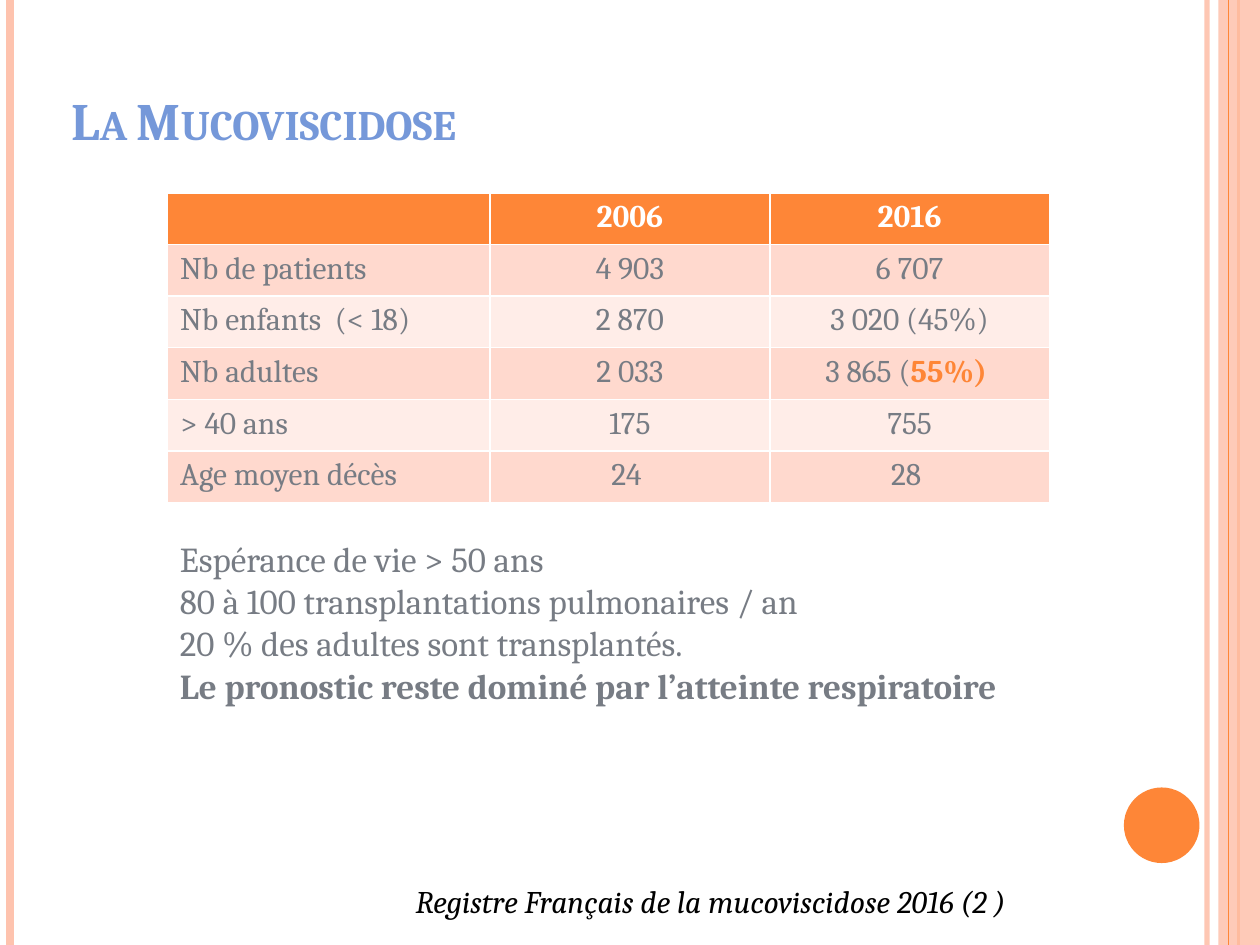
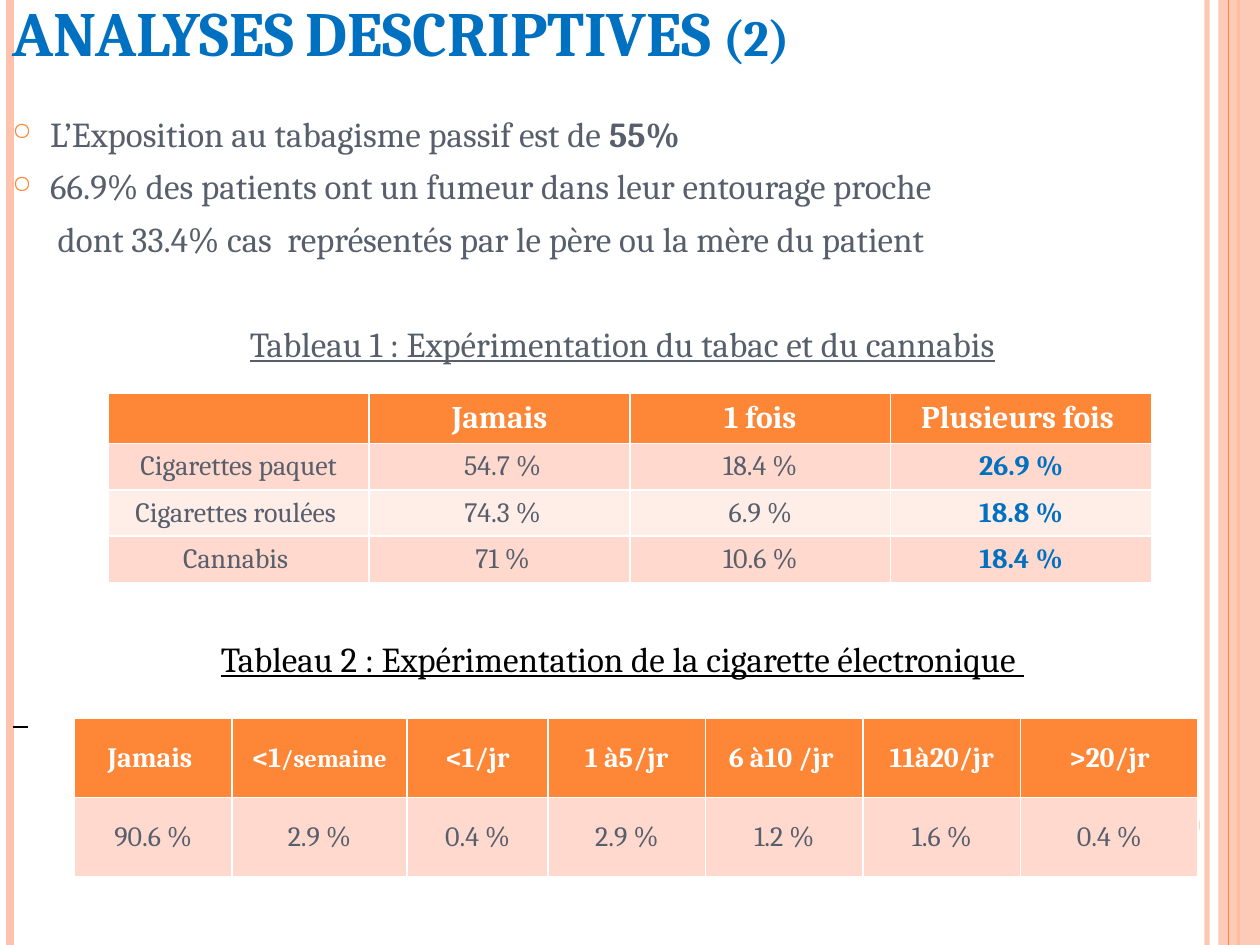
"""Builds two slides on cystic fibrosis figures and smoking habits."""
from lxml.etree import SubElement
from pptx import Presentation
from pptx.dml.color import RGBColor
from pptx.enum.shapes import MSO_CONNECTOR, MSO_SHAPE
from pptx.enum.text import MSO_ANCHOR, PP_ALIGN
from pptx.oxml.ns import qn
from pptx.util import Inches, Pt

FACE = "Cambria"
PEACH, ORANGE, WHITE, BLACK = "FEC3AE", "FE8637", "FFFFFF", "000000"
GREY, SLATE, SKY, BLUE = "777C84", "575F6D", "7598D9", "0070C0"
BANDS = ("FFD9CE", "FFEDE8")
WIDE, HIGH = 10, 7.5

RULES = [(9.58, PEACH, 3, 93), (0.08, PEACH, 4.5, 100), (9.83, ORANGE, 1.5, 100)]
EDGE = (9.75, ORANGE, 0.75, 100)

CARE = [
    ["", "2006", "2016"],
    ["Nb de patients", "4 903", "6 707"],
    ["Nb enfants  (< 18)", "2 870", "3 020 (45%)"],
    ["Nb adultes", "2 033", [("3 865 (", {}), ("55%) ", {"hue": ORANGE, "bold": True})]],
    ["> 40 ans", "175", "755"],
    ["Age moyen décès", "24 ", "28 "],
]
FACTS = [
    "Espérance de vie > 50 ans",
    "80 à 100 transplantations pulmonaires / an",
    "20 % des adultes sont transplantés.",
    [("Le pronostic reste dominé par l’atteinte respiratoire", {"bold": True})],
]
SOURCE = "Registre Français de la mucoviscidose 2016 (2 )"

POINTS = [
    [("L’Exposition au tabagisme passif est de ", {}), ("55%", {"bold": True})],
    "66.9% des patients ont un fumeur dans leur entourage proche",
]
DETAIL = "dont 33.4% cas  représentés par le père ou la mère du patient"
HEADS = [
    ("Tableau 1 : Expérimentation du tabac et du cannabis", 4, SLATE),
    ("Tableau 2 : Expérimentation de la cigarette électronique ", 10, BLACK),
]
SMOKE = [
    ["", "Jamais", "1 fois", "Plusieurs fois "],
    ["Cigarettes paquet", " 54.7 %", "18.4 %", "26.9 %"],
    ["Cigarettes roulées ", " 74.3 %", "6.9 %", "18.8 %"],
    ["Cannabis ", " 71 %", "10.6 %", "18.4 %"],
]
VAPE = [
    ["Jamais ", [("<1", {}), ("/semaine", {"size": 14})], "<1/jr", "1 à5/jr",
     "6 à10 /jr ", "11à20/jr", ">20/jr"],
    ["90.6 %", "2.9 %", "0.4 %", "2.9 %", "1.2 %", "1.6 %", "0.4 %"],
]


def tint(code):
    """Turn a hex string into a colour."""
    return RGBColor.from_string(code)


def style(font, size=None, hue=None, bold=None, italic=None, under=None):
    """Set the given traits on a font."""
    font.name = FACE
    if size:
        font.size = Pt(size)
    if hue:
        font.color.rgb = tint(hue)
    for key, value in (("bold", bold), ("italic", italic), ("underline", under)):
        if value is not None:
            setattr(font, key, value)


def write(para, text, align=PP_ALIGN.LEFT, **look):
    """Fill a paragraph with a string or a list of styled runs."""
    para.alignment = align
    style(para.font, **look)
    for part, extra in [(text, {})] if isinstance(text, str) else text:
        if part:
            run = para.add_run()
            run.text = part
            if extra:
                style(run.font, **extra)


def frame(slide, x, y, w, h, anchor=MSO_ANCHOR.TOP):
    """Add an empty wrapping text box and return its frame."""
    box = slide.shapes.add_textbox(Inches(x), Inches(y), Inches(w), Inches(h))
    area = box.text_frame
    area.word_wrap = True
    area.vertical_anchor = anchor
    return area


def fade(shape, alpha):
    """Make every colour of a shape partly transparent."""
    if alpha < 100:
        for node in list(shape._element.spPr.iter(qn("a:srgbClr"))):
            SubElement(node, qn("a:alpha")).set("val", str(alpha * 1000))


def rule(slide, ends, hue, width, alpha=100):
    """Draw a straight line between two points."""
    line = slide.shapes.add_connector(MSO_CONNECTOR.STRAIGHT, *map(Inches, ends))
    line.line.color.rgb = tint(hue)
    line.line.width = Pt(width)
    fade(line, alpha)
    SubElement(line._element.spPr, qn("a:effectLst"))


def solid(slide, kind, spot, hue, alpha=100):
    """Draw a filled shape without outline."""
    shape = slide.shapes.add_shape(kind, *map(Inches, spot))
    shape.shadow.inherit = False
    shape.fill.solid()
    shape.fill.fore_color.rgb = tint(hue)
    shape.line.fill.background()
    fade(shape, alpha)


def start(deck, title, spot, size, hue):
    """Add a slide with the shared bands, disc and title."""
    slide = deck.slides.add_slide(deck.slide_layouts[6])
    for x, *look in RULES:
        rule(slide, (x, 0, x, HIGH), *look)
    solid(slide, MSO_SHAPE.RECTANGLE, (9.67, 0, 0.33, HIGH), PEACH, 87)
    x, *look = EDGE
    rule(slide, (x, 0, x, HIGH), *look)
    solid(slide, MSO_SHAPE.OVAL, (8.92, 6.25, 0.6, 0.6), ORANGE)
    para = frame(slide, *spot, MSO_ANCHOR.BOTTOM).paragraphs[0]
    write(para, title, size=size, hue=hue, bold=True)
    para.runs[0]._r.get_or_add_rPr().set("cap", "small")
    return slide


def grid(slide, x, y, cols, tall, rows, sizes, hue, anchor, left=False, strong=None):
    """Add a banded table; tall and sizes give header and body values."""
    heights = [tall[0]] + [tall[1]] * (len(rows) - 1)
    table = slide.shapes.add_table(
        len(rows), len(cols), Inches(x), Inches(y),
        Inches(sum(cols)), Inches(sum(heights))).table
    for col, width in zip(table.columns, cols):
        col.width = Inches(width)
    for r, row in enumerate(rows):
        table.rows[r].height = Inches(heights[r])
        for c, text in enumerate(row):
            cell = table.cell(r, c)
            cell.vertical_anchor = anchor
            cell.fill.solid()
            cell.fill.fore_color.rgb = tint(BANDS[(r - 1) % 2] if r else ORANGE)
            key = r > 0 and c == strong
            ink = BLUE if key else hue
            align = PP_ALIGN.LEFT if left and c == 0 else PP_ALIGN.CENTER
            write(cell.text_frame.paragraphs[0], text, align,
                  size=sizes[r > 0], hue=ink if r else WHITE, bold=key or r == 0)


def bullet(para):
    """Give a paragraph a hanging ring bullet."""
    props = para._p.get_or_add_pPr()
    props.set("marL", str(Inches(0.3)))
    props.set("indent", str(-Inches(0.3)))
    paint = SubElement(props, qn("a:buClr"))
    SubElement(paint, qn("a:srgbClr")).set("val", ORANGE)
    SubElement(props, qn("a:buSzPct")).set("val", "70000")
    SubElement(props, qn("a:buChar")).set("char", "○")


def illness(deck):
    """Build the slide on the disease."""
    slide = start(deck, "La Mucoviscidose", (0.47, 0.3, 9.03, 0.95), 30, SKY)
    grid(slide, 1.33, 1.53, [2.56, 2.22, 2.22], (0.41, 0.41), CARE, (18, 18),
         GREY, MSO_ANCHOR.TOP, left=True)
    area = frame(slide, 1.33, 4.22, 7.03, 1.45)
    for i, text in enumerate(FACTS):
        para = area.add_paragraph() if i else area.paragraphs[0]
        write(para, text, size=20, hue=GREY)
    write(frame(slide, 3.2, 6.95, 5.04, 0.4).paragraphs[0], SOURCE,
          size=18, hue=BLACK, italic=True)


def habits(deck):
    """Build the slide on smoking habits."""
    slide = start(deck, "ANALYSES DESCRIPTIVES (2)", (0, 0, WIDE, 0.6), 36, BLUE)
    top, wide, step = 0.84, 9.88, 0.417
    area = frame(slide, 0, top, wide, 3 * step)
    for i, text in enumerate(POINTS + [DETAIL]):
        para = area.add_paragraph() if i else area.paragraphs[0]
        if text is DETAIL:
            para._p.get_or_add_pPr().set("marL", str(Inches(0.36)))
        else:
            bullet(para)
        para.space_before = Pt(6)
        write(para, text, size=20, hue=SLATE)
    for text, slot, hue in HEADS:
        para = frame(slide, 0, top + slot * step, wide, step).paragraphs[0]
        para.space_before = Pt(6)
        write(para, text, PP_ALIGN.CENTER, size=20, hue=hue, under=True)
    rule(slide, (0.1, 5.77, 0.22, 5.77), BLACK, 1)
    grid(slide, 0.86, 3.12, [2.07] * 4, (0.39, 0.35), SMOKE, (18, 16),
         SLATE, MSO_ANCHOR.MIDDLE, strong=3)
    grid(slide, 0.59, 5.7, [1.25, 1.39, 1.12, 1.25, 1.25, 1.25, 1.41],
         (0.63, 0.63), VAPE, (16, 16), SLATE, MSO_ANCHOR.MIDDLE)


def main():
    """Build and save the deck."""
    deck = Presentation()
    deck.slide_width, deck.slide_height = Inches(WIDE), Inches(HIGH)
    illness(deck)
    habits(deck)
    deck.save("out.pptx")


if __name__ == "__main__":
    main()
